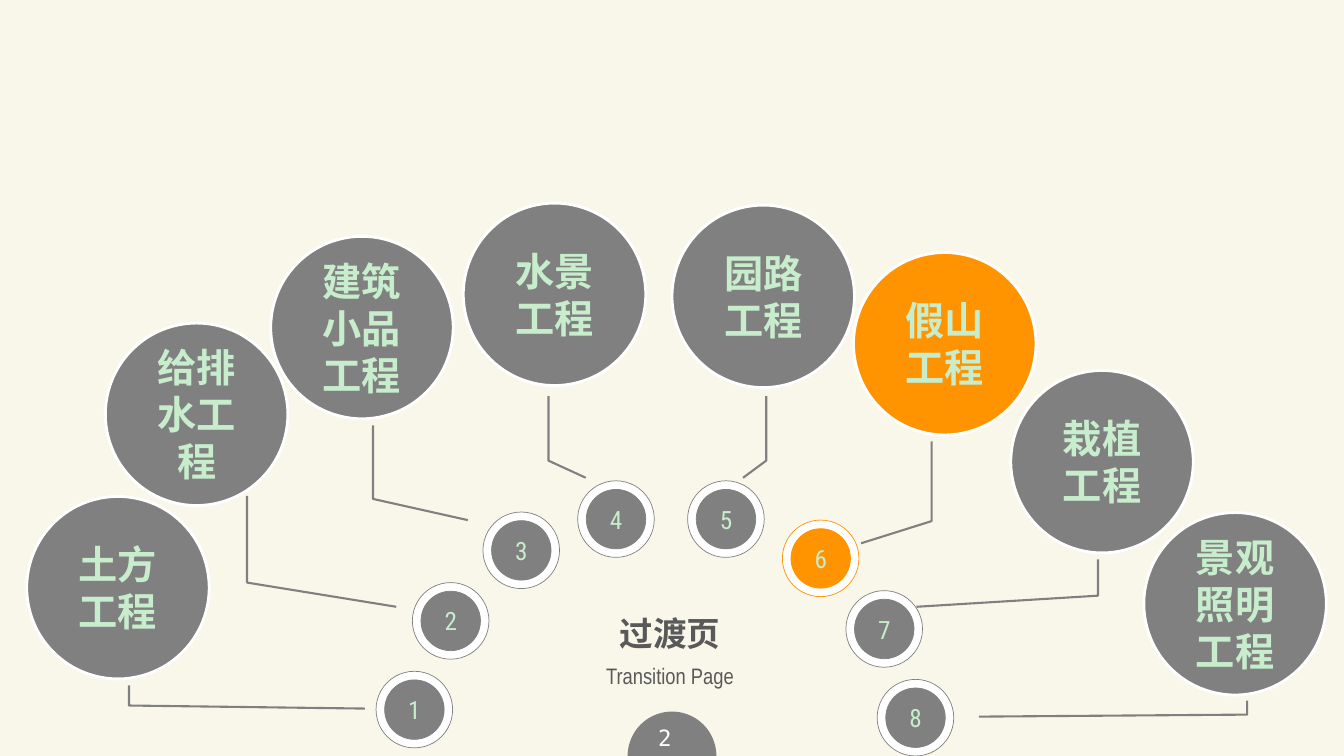
"""Builds a transition slide with eight project topics fanned around an arc of numbers."""
from dataclasses import dataclass
from math import cos, pi, sin

from lxml.etree import SubElement
from pptx import Presentation
from pptx.dml.color import RGBColor
from pptx.enum.shapes import MSO_SHAPE as Shape
from pptx.enum.text import MSO_ANCHOR as Anchor, PP_ALIGN as Align
from pptx.oxml.ns import qn
from pptx.util import Inches, Pt

TITLE, SUBTITLE, PAGE = "过渡页", "Transition Page", "2"
CURRENT = 6
COLUMNS, ROWS = 1333, 750
TOPIC_SIZE, RING_SIZE, DISC_SIZE = 181, 76, 59

# Each topic: label, centre of its circle, centre of its number, leader points.
TOPICS = [
    ("土方工程", (117, 583), (411, 704), [(362, 703), (128, 700), (128, 680)]),
    ("给排水工程", (195, 411), (447, 616), [(393, 602), (245, 578), (245, 492)]),
    ("建筑小品工程", (359, 325), (517, 546), [(464, 516), (370, 495), (370, 422)]),
    ("水景工程", (550, 292), (611, 515), [(581, 474), (544, 457), (544, 393)]),
    ("园路工程", (757, 294), (720, 515), [(737, 474), (760, 457), (760, 393)]),
    ("假山工程", (937, 341), (814, 554), [(854, 539), (924, 517), (924, 438)]),
    ("栽植工程", (1093, 458), (877, 624), [(909, 602), (1089, 591), (1089, 555)]),
    ("景观照明工程", (1225, 599), (908, 712), [(971, 711), (1237, 709), (1237, 695)]),
]


@dataclass(frozen=True)
class Theme:
    background: str = "F9F7EA"
    gray: str = "808080"
    accent: str = "FF9300"
    mint: str = "C7EDCC"
    white: str = "FFFFFF"
    dark: str = "595959"
    chinese: str = "Noto Sans CJK SC"
    title: str = "Times New Roman"
    subtitle: str = "Arial Narrow"
    number: str = "Roboto Condensed"
    page: str = "DejaVu Sans Mono"
    topic_size: float = 28
    title_size: float = 24
    number_size: float = 18
    small_size: float = 16


THEME = Theme()


def grid(steps):
    return Inches(steps / 100)


def write(shape, text, *, font, size, color, bold=False, inset=0, leading=None):
    frame = shape.text_frame
    frame.word_wrap = True
    frame.vertical_anchor = Anchor.MIDDLE
    frame.margin_left = frame.margin_right = grid(inset)
    frame.margin_top = frame.margin_bottom = 0
    paragraph = frame.paragraphs[0]
    paragraph.alignment = Align.CENTER
    if leading:
        paragraph.line_spacing = Pt(leading)
    run = paragraph.add_run()
    run.text = text
    run.font.name, run.font.size, run.font.bold = font, Pt(size), bold
    run.font.color.rgb = RGBColor.from_string(color)
    SubElement(run.font._element, qn("a:ea")).set("typeface", THEME.chinese)


def paint(shape, fill=None, line=None, width=0):
    shape.shadow.inherit = False
    if fill:
        shape.fill.solid()
        shape.fill.fore_color.rgb = RGBColor.from_string(fill)
    else:
        shape.fill.background()
    if line:
        shape.line.color.rgb = RGBColor.from_string(line)
        shape.line.width = Pt(width)
    else:
        shape.line.fill.background()


def circle(slide, centre, size, **look):
    left, top = (grid(middle - size / 2) for middle in centre)
    disc = slide.shapes.add_shape(Shape.OVAL, left, top, grid(size), grid(size))
    paint(disc, **look)
    return disc


def outline(slide, points, closed, **look):
    start, *rest = [(grid(x), grid(y)) for x, y in points]
    builder = slide.shapes.build_freeform(*start)
    builder.add_line_segments(rest, close=closed)
    paint(builder.convert_to_shape(), **look)


def place(shape, left, top, width, height):
    shape.left, shape.top = grid(left), grid(top)
    shape.width, shape.height = grid(width), grid(height)


def add_centre(slide):
    heading, subheading = slide.placeholders
    place(heading, 574, 603, 181, 50)
    write(heading, TITLE, font=THEME.title, size=THEME.title_size,
          color=THEME.dark, bold=True)
    place(subheading, 574, 652, 181, 37)
    write(subheading, SUBTITLE, font=THEME.subtitle, size=THEME.small_size,
          color=THEME.dark)
    middle, radius = COLUMNS / 2, 44
    dome = [(middle - radius * cos(pi * step / 48), ROWS - radius * sin(pi * step / 48))
            for step in range(49)]
    outline(slide, dome, True, fill=THEME.gray)
    page = slide.shapes.add_textbox(grid(624), grid(713), grid(71), grid(37))
    write(page, PAGE, font=THEME.page, size=THEME.small_size, color=THEME.white)


def add_topic(slide, number, label, centre, number_centre, leader):
    fill = THEME.accent if number == CURRENT else THEME.gray
    topic = circle(slide, centre, TOPIC_SIZE, fill=fill, line=THEME.white, width=2)
    write(topic, label, font=THEME.chinese, size=THEME.topic_size, color=THEME.mint,
          bold=True, inset=10, leading=THEME.topic_size * 1.2)
    outline(slide, leader, False, line=THEME.gray, width=1.5)
    circle(slide, number_centre, RING_SIZE, fill=THEME.white, line=fill, width=0.5)
    disc = circle(slide, number_centre, DISC_SIZE, fill=fill, line=fill, width=0.5)
    write(disc, str(number), font=THEME.number, size=THEME.number_size, color=THEME.mint)


def main():
    deck = Presentation()
    deck.slide_width, deck.slide_height = grid(COLUMNS), grid(ROWS)
    slide = deck.slides.add_slide(deck.slide_layouts[0])
    slide.background.fill.solid()
    slide.background.fill.fore_color.rgb = RGBColor.from_string(THEME.background)
    add_centre(slide)
    for number, topic in enumerate(TOPICS, start=1):
        add_topic(slide, number, *topic)
    deck.save("out.pptx")


if __name__ == "__main__":
    main()
